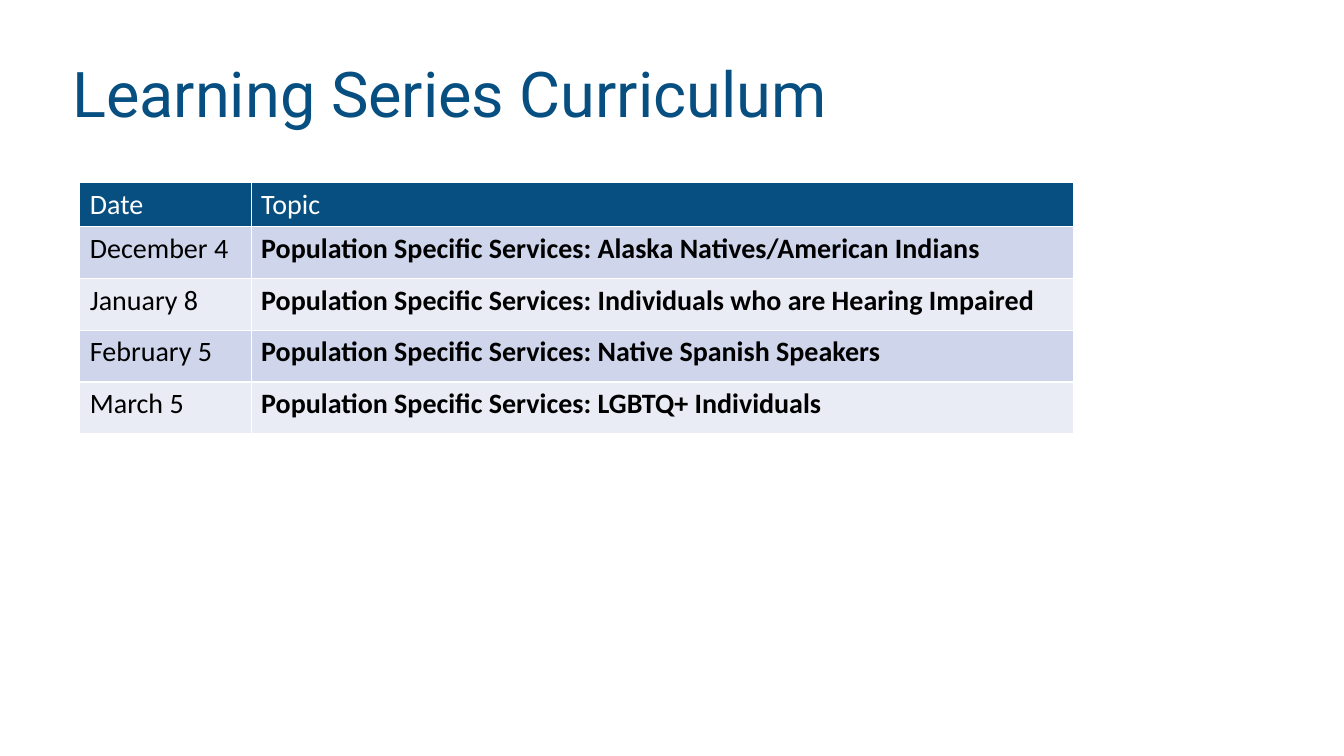
from pptx import Presentation
from pptx.dml.color import RGBColor
from pptx.enum.text import MSO_ANCHOR
from pptx.util import Pt

MIDDLE = MSO_ANCHOR.MIDDLE

TITLE = "Learning Series Curriculum"
HEADER = ("Date", "Topic")
SESSIONS = [
    ("December 4", "Population Specific Services: Alaska Natives/American Indians"),
    ("January 8", "Population Specific Services: Individuals who are Hearing Impaired"),
    ("February 5", "Population Specific Services: Native Spanish Speakers"),
    ("March 5", "Population Specific Services: LGBTQ+ Individuals"),
]
NAVY, WHITE, BLACK = "064F80", "FFFFFF", "000000"
BANDS = ("CFD5EA", "E9EBF5")
COLUMN_WIDTHS = (122.4, 587.5)
HEADER_HEIGHT, SESSION_HEIGHT = 31.5, 37


def color(value):
    return RGBColor.from_string(value)


def add_span(para, text, font, size, ink, bold=False):
    span = para.add_run()
    span.text = text
    span.font.name = font
    span.font.size = Pt(size)
    span.font.bold = bold
    span.font.color.rgb = color(ink)


def add_title(page):
    box = page.shapes.add_textbox(Pt(44.6), Pt(28.8), Pt(877.7), Pt(81.4))
    frame = box.text_frame
    frame.word_wrap = True
    frame.vertical_anchor = MIDDLE
    para = frame.paragraphs[0]
    para.line_spacing = 0.9
    add_span(para, TITLE, "Roboto", 45, NAVY)


def add_schedule(page):
    rows = [HEADER] + SESSIONS
    height = HEADER_HEIGHT + SESSION_HEIGHT * len(SESSIONS)
    table = page.shapes.add_table(
        len(rows), len(HEADER), Pt(57), Pt(130.4), Pt(sum(COLUMN_WIDTHS)), Pt(height)
    ).table
    for column, width in zip(table.columns, COLUMN_WIDTHS):
        column.width = Pt(width)
    for r, texts in enumerate(rows):
        is_header = r == 0
        table.rows[r].height = Pt(HEADER_HEIGHT if is_header else SESSION_HEIGHT)
        fill = NAVY if is_header else BANDS[(r - 1) % 2]
        ink = WHITE if is_header else BLACK
        for c, text in enumerate(texts):
            cell = table.cell(r, c)
            cell.fill.solid()
            cell.fill.fore_color.rgb = color(fill)
            bold = c == 1 and not is_header
            add_span(cell.text_frame.paragraphs[0], text, "Calibri", 20, ink, bold)


def main():
    deck = Presentation()
    deck.slide_width, deck.slide_height = Pt(960), Pt(540)
    page = deck.slides.add_slide(deck.slide_layouts[6])
    add_title(page)
    add_schedule(page)
    deck.save("out.pptx")


if __name__ == "__main__":
    main()
